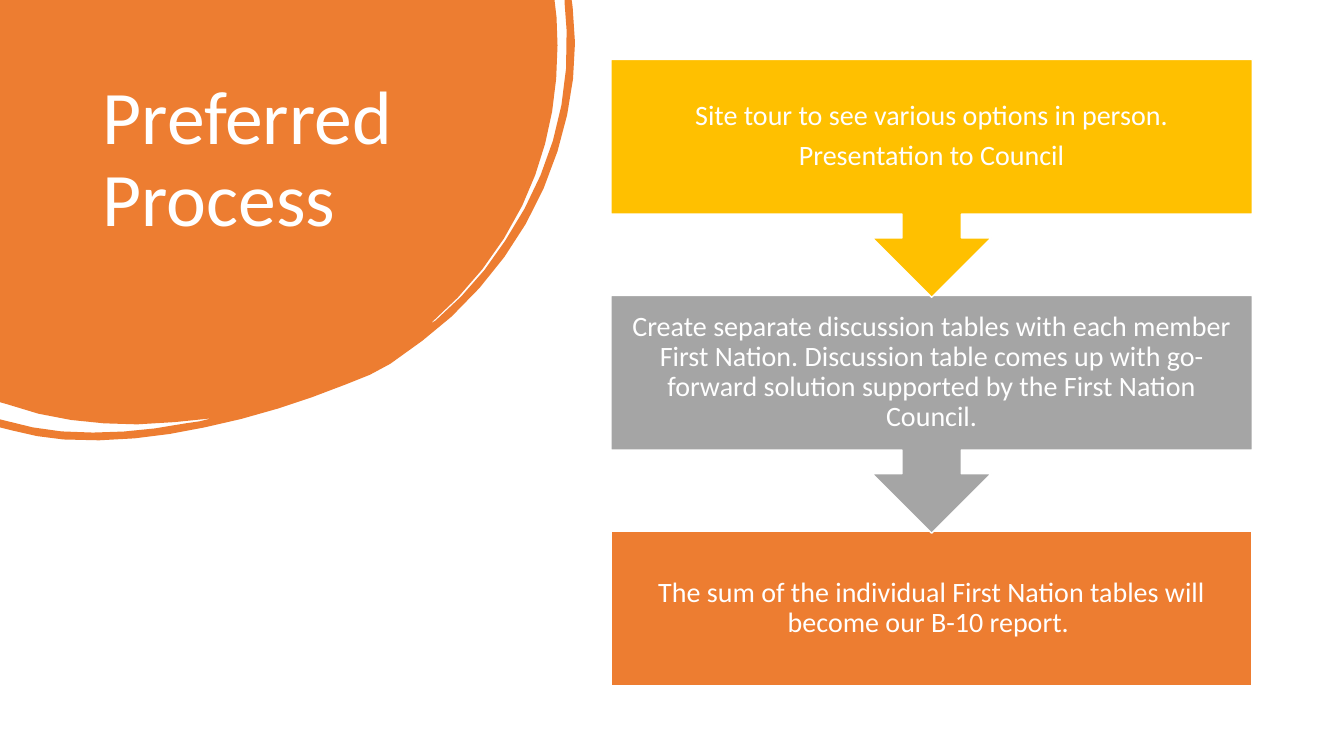
from dataclasses import dataclass
from math import ceil, dist

from pptx import Presentation, util as u
from pptx.dml.color import RGBColor
from pptx.enum import shapes, text


@dataclass(frozen=True)
class Theme:
    font: str = "Calibri"
    white: str = "FFFFFF"
    orange: str = "ED7D31"
    grey: str = "A5A5A5"
    gold: str = "FFC000"
    title_size: int = 54
    step_size: int = 20


THEME = Theme()

# Content: the title and the steps from top to bottom
TITLE = "Preferred Process"
STEPS = [
    (["Site tour to see various options in person.", "Presentation to Council"], THEME.gold),
    (["Create separate discussion tables with each member First Nation. "
      "Discussion table comes up with go-forward solution supported by the "
      "First Nation Council."], THEME.grey),
    (["The sum of the individual First Nation tables will become our B-10 report. "], THEME.orange),
]

# Corner blob in inches: a pair is a straight step, a six-tuple a Bézier curve
BLOB = [
    (0, 0), (5.5, 0), (5.52, 0.17),
    (5.53, 0.26, 5.53, 0.36, 5.53, 0.45), (5.53, 1.01, 5.42, 1.54, 5.18, 2.04),
    (4.96, 2.49, 4.65, 2.88, 4.27, 3.21), (4.29, 3.21, 4.3, 3.19, 4.32, 3.18),
    (4.59, 2.95, 4.82, 2.69, 5.01, 2.39), (5.43, 1.76, 5.65, 1.07, 5.62, 0.3),
    (5.62, 0.21, 5.61, 0.12, 5.6, 0.03), (5.6, 0), (5.67, 0), (5.68, 0.07),
    (5.74, 0.54, 5.68, 1.02, 5.53, 1.5), (5.33, 2.14, 4.97, 2.68, 4.48, 3.14),
    (4.39, 3.23, 4.29, 3.31, 4.19, 3.38), (4.09, 3.46, 3.99, 3.53, 3.87, 3.61),
    (3.75, 3.69, 3.6, 3.75, 3.44, 3.81), (2.99, 3.99, 2.52, 4.14, 2.03, 4.24),
    (1.57, 4.34, 1.1, 4.39, 0.63, 4.36), (0.45, 4.34, 0.28, 4.32, 0.12, 4.27),
    (0, 4.24), (0, 4.16), (0.04, 4.17),
    (0.23, 4.23, 0.42, 4.26, 0.61, 4.28), (1.03, 4.31, 1.43, 4.28, 1.84, 4.2),
    (1.89, 4.2, 1.93, 4.19, 1.98, 4.18), (2.02, 4.17, 2.06, 4.16, 2.1, 4.15),
    (1.86, 4.18, 1.61, 4.2, 1.36, 4.21), (0.92, 4.21, 0.48, 4.16, 0.07, 4.01),
    (0, 3.99),
]
CHORD = 0.4

# Layout in inches
SLIDE_WIDTH, SLIDE_HEIGHT = 13.33, 7.5
TITLE_BOX = (0.92, 0.74, 3.52, 2.22)
STEP_LEFT, STEP_TOP, STEP_WIDTH = 6.06, 0.59, 6.36
STEP_PITCH, BOX_HEIGHT, CALLOUT_HEIGHT = 2.34, 1.53, 2.36


def inches(values):
    return [u.Inches(value) for value in values]


def flatten(segments):
    """Turn straight steps and Bézier curves into one list of points."""
    points = []
    for segment in segments:
        if len(segment) == 2:
            points.append(segment)
            continue
        controls = [points[-1], segment[:2], segment[2:4], segment[4:]]
        count = ceil(dist(controls[0], controls[3]) / CHORD)
        for step in range(1, count + 1):
            t = step / count
            weights = ((1 - t) ** 3, 3 * t * (1 - t) ** 2, 3 * t ** 2 * (1 - t), t ** 3)
            points.append(tuple(sum(w * c[axis] for w, c in zip(weights, controls))
                                for axis in (0, 1)))
    return points


def paint(shape, fill, line=None):
    shape.shadow.inherit = False
    shape.fill.solid()
    shape.fill.fore_color.rgb = RGBColor.from_string(fill)
    if line:
        shape.line.color.rgb = RGBColor.from_string(line)
        shape.line.width = u.Pt(1)
    else:
        shape.line.fill.background()


def write(slide, lines, *, box, size, align, anchor, margins, space_after=0):
    frame = slide.shapes.add_textbox(*inches(box)).text_frame
    frame.word_wrap = True
    frame.vertical_anchor = anchor
    (frame.margin_left, frame.margin_top,
     frame.margin_right, frame.margin_bottom) = inches(margins)
    for index, line in enumerate(lines):
        paragraph = frame.add_paragraph() if index else frame.paragraphs[0]
        paragraph.alignment = align
        paragraph.line_spacing = 0.9
        paragraph.space_after = u.Pt(space_after)
        run = paragraph.add_run()
        run.text = line
        run.font.name = THEME.font
        run.font.size = u.Pt(size)
        run.font.color.rgb = RGBColor.from_string(THEME.white)


def add_title(slide):
    # Blob behind the title
    start, *rest = [tuple(inches(point)) for point in flatten(BLOB)]
    builder = slide.shapes.build_freeform(*start)
    builder.add_line_segments(rest, close=True)
    paint(builder.convert_to_shape(), THEME.orange)

    write(slide, [TITLE], box=TITLE_BOX, size=THEME.title_size,
          align=text.PP_ALIGN.LEFT, anchor=text.MSO_ANCHOR.TOP,
          margins=(0.1, 0.05, 0.1, 0.05))


def add_steps(slide):
    # From the bottom up, so each arrow tip lies over the next box
    last = len(STEPS) - 1
    for row in range(last, -1, -1):
        lines, color = STEPS[row]
        top = STEP_TOP + row * STEP_PITCH
        if row == last:
            kind, height, rotation = shapes.MSO_SHAPE.RECTANGLE, BOX_HEIGHT, 0
        else:
            kind, height, rotation = shapes.MSO_SHAPE.UP_ARROW_CALLOUT, CALLOUT_HEIGHT, 180
        step = slide.shapes.add_shape(kind, *inches((STEP_LEFT, top, STEP_WIDTH, height)))
        step.rotation = rotation
        paint(step, color, line=THEME.white)
        write(slide, lines, box=(STEP_LEFT, top, STEP_WIDTH, BOX_HEIGHT),
              size=THEME.step_size, align=text.PP_ALIGN.CENTER,
              anchor=text.MSO_ANCHOR.MIDDLE, margins=(0.16,) * 4,
              space_after=0.35 * THEME.step_size)


def main():
    presentation = Presentation()
    presentation.slide_width, presentation.slide_height = inches((SLIDE_WIDTH, SLIDE_HEIGHT))
    slide = presentation.slides.add_slide(presentation.slide_layouts[6])
    add_title(slide)
    add_steps(slide)
    presentation.save("out.pptx")


if __name__ == "__main__":
    main()
